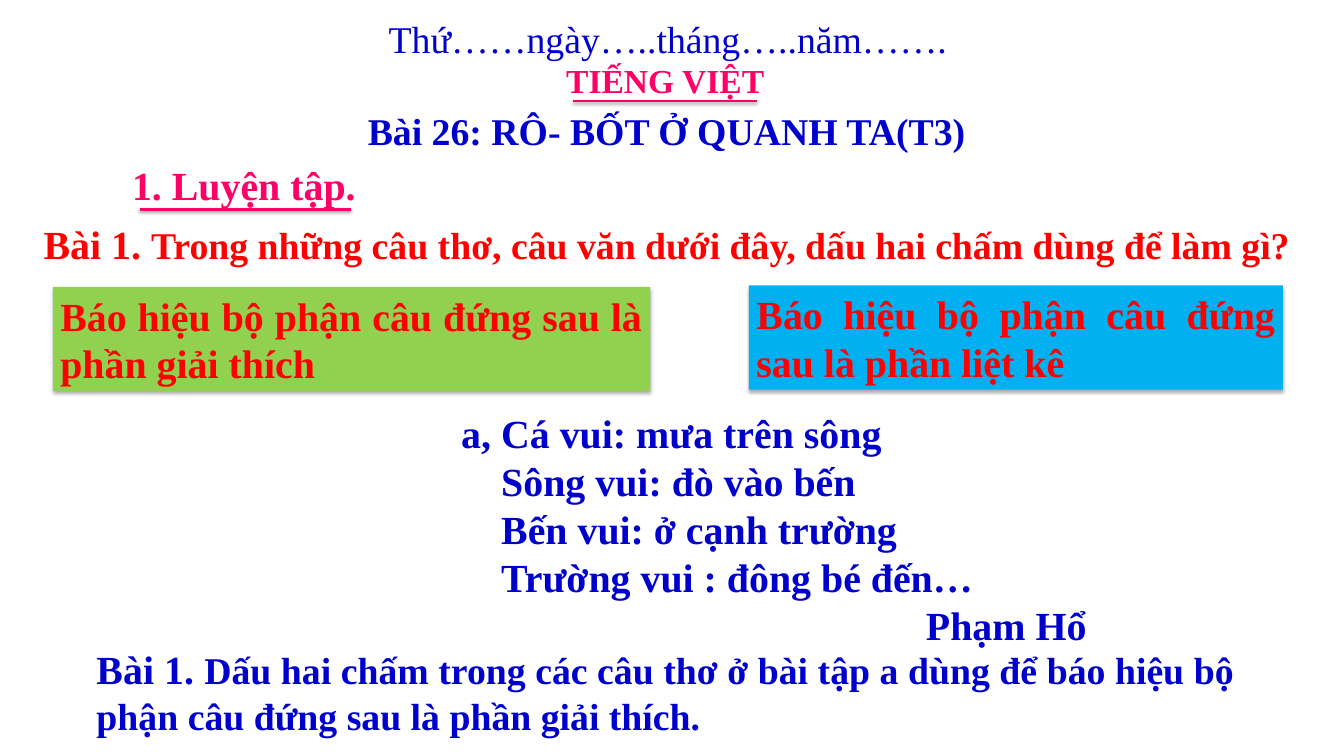
import pptx
import pptx.dml.color
import pptx.enum.shapes
import pptx.enum.text
import pptx.oxml
import pptx.oxml.ns
import pptx.util
from pptx.util import Inches

PINK, RED, BLUE = "FF0066", "FF0000", "0000CC"
GREEN, SKY = "92D050", "00B0F0"
ALIGN = pptx.enum.text.PP_ALIGN


def rgb(value):
    return pptx.dml.color.RGBColor.from_string(value)


def write(p, text, size=38, color=BLUE, bold=True, font="Times New Roman"):
    r = p.add_run()
    r.text = text
    r.font.name = font
    r.font.size = pptx.util.Pt(size)
    r.font.bold = bold
    r.font.color.rgb = rgb(color)


def add_shadow(sp, alpha, blur, distance):
    """Black shadow falling straight down; blur and distance in points."""
    sp._element.spPr.append(pptx.oxml.parse_xml(
        f'<a:effectLst {pptx.oxml.ns.nsdecls("a")}>'
        f'<a:outerShdw blurRad="{pptx.util.Pt(blur)}" dist="{pptx.util.Pt(distance)}"'
        ' dir="5400000" rotWithShape="0"><a:srgbClr val="000000">'
        f'<a:alpha val="{alpha * 1000}"/></a:srgbClr></a:outerShdw></a:effectLst>'))


class Lesson:
    def __init__(self, prs):
        self.s = prs.slides.add_slide(prs.slide_layouts[6])

    def frame(self, sp, wrap=True):
        tf = sp.text_frame
        tf.word_wrap = wrap
        tf.auto_size = pptx.enum.text.MSO_AUTO_SIZE.SHAPE_TO_FIT_TEXT
        return tf

    def text(self, x, y, w, h, wrap=True):
        sp = self.s.shapes.add_textbox(Inches(x), Inches(y), Inches(w), Inches(h))
        return self.frame(sp, wrap)

    def heading(self, x, y, w, h, text, align=ALIGN.LEFT, wrap=False, **style):
        p = self.text(x, y, w, h, wrap).paragraphs[0]
        p.alignment = align
        write(p, text, **style)

    def exercise(self, x, y, w, h, text, color):
        p = self.text(x, y, w, h).paragraphs[0]
        p.alignment = ALIGN.JUSTIFY
        write(p, "Bài 1. ", color=color)
        write(p, text, size=36, color=color)

    def underline(self, x1, x2, y, width, alpha, distance):
        line = self.s.shapes.add_connector(
            pptx.enum.shapes.MSO_CONNECTOR.STRAIGHT,
            Inches(x1), Inches(y), Inches(x2), Inches(y))
        line.line.color.rgb = rgb(PINK)
        line.line.width = pptx.util.Pt(width)
        add_shadow(line, alpha, 3.1, distance)

    def answer(self, x, y, w, h, text, fill):
        sp = self.s.shapes.add_shape(
            pptx.enum.shapes.MSO_SHAPE.RECTANGLE,
            Inches(x), Inches(y), Inches(w), Inches(h))
        sp.fill.solid()
        sp.fill.fore_color.rgb = rgb(fill)
        sp.line.fill.background()
        add_shadow(sp, 32, 3.5, 2.2)
        p = self.frame(sp).paragraphs[0]
        p.alignment = ALIGN.JUSTIFY
        write(p, text, color=RED)

    def poem(self, x, y, w, h, lines, author):
        tf = self.text(x, y, w, h)
        for i, text in enumerate(lines + [author]):
            p = tf.add_paragraph() if i else tf.paragraphs[0]
            p.alignment = ALIGN.RIGHT if text == author else ALIGN.JUSTIFY
            if i and text != author:
                p._p.get_or_add_pPr().set("marL", str(Inches(0.53)))
            write(p, text)


def main():
    prs = pptx.Presentation()
    prs.slide_width, prs.slide_height = Inches(17.8), Inches(10)
    lesson = Lesson(prs)

    # Date, subject and lesson title
    lesson.heading(5.05, 0.16, 7.67, 0.71, "Thứ……ngày…..tháng…..năm…….",
                   size=36, bold=False)
    lesson.heading(7.4, 0.75, 2.85, 0.64, "TIẾNG VIỆT", size=32, color=PINK)
    lesson.underline(7.59, 10.03, 1.34, 2, 38, 1.6)
    lesson.heading(4.73, 1.38, 8.2, 0.71, "Bài 26: RÔ- BỐT Ở QUANH TA(T3)",
                   align=ALIGN.CENTER, size=36)

    # Section and question
    lesson.heading(1.65, 2.08, 4.58, 0.74, "1. Luyện tập.", wrap=True, color=PINK)
    lesson.underline(1.85, 4.65, 2.77, 3, 35, 1.8)
    lesson.exercise(
        0.48, 2.86, 17, 0.74,
        "Trong những câu thơ, câu văn dưới đây, dấu hai chấm dùng để làm gì?", RED)

    # Possible answers
    lesson.answer(0.7, 3.8, 7.91, 1.38,
                  "Báo hiệu bộ phận câu đứng sau là phần giải thích", GREEN)
    lesson.answer(9.92, 3.78, 7.07, 1.38,
                  "Báo hiệu bộ phận câu đứng sau là phần liệt kê", SKY)

    # Poem and conclusion
    lesson.poem(6.01, 5.37, 8.48, 3.3,
                ["a, Cá vui: mưa trên sông", "Sông vui: đò vào bến",
                 "Bến vui: ở cạnh trường", "Trường vui : đông bé đến…"], "Phạm Hổ")
    lesson.exercise(
        1.18, 8.49, 15.27, 1.35,
        "Dấu hai chấm trong các câu thơ ở bài tập a dùng để báo hiệu bộ phận câu "
        "đứng sau là phần giải thích.", BLUE)

    prs.save("out.pptx")


if __name__ == "__main__":
    main()
